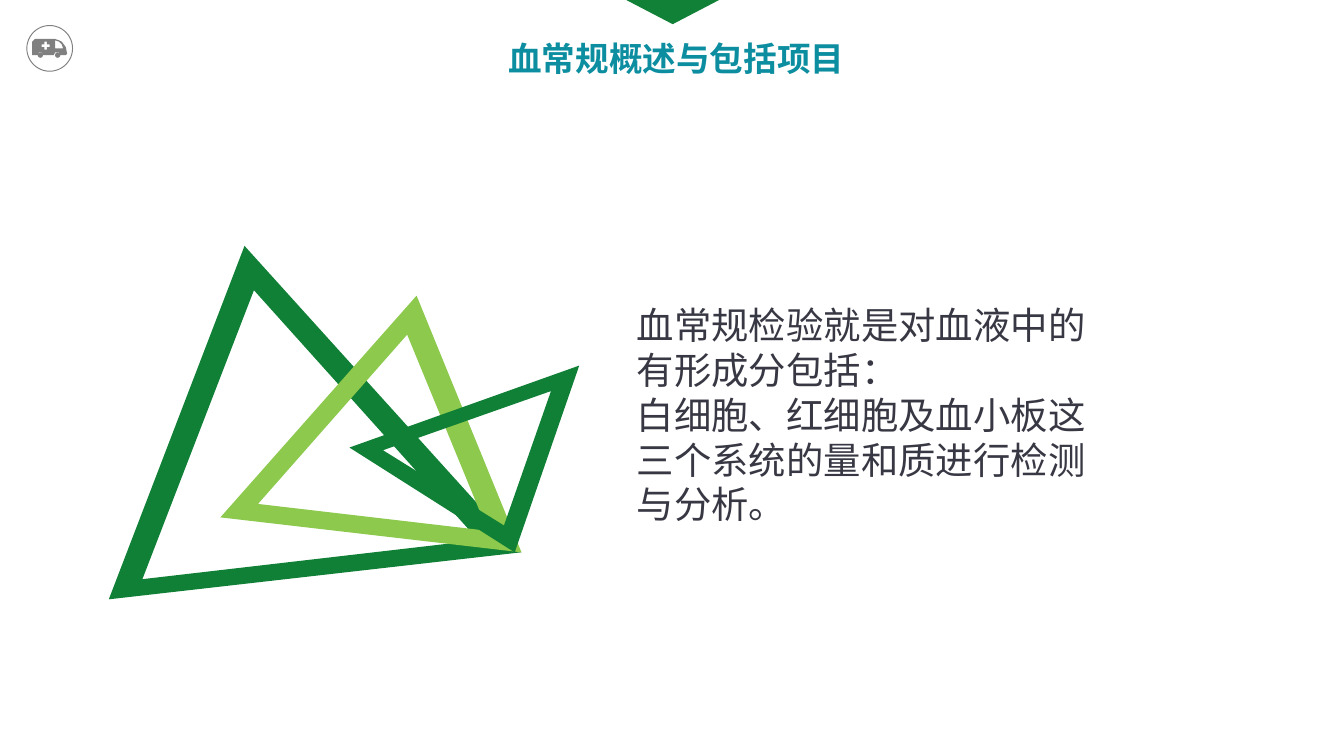
"""Build the slide that introduces the routine blood test."""
from dataclasses import dataclass

from lxml import etree
from pptx import Presentation
from pptx import util as u
from pptx.dml.color import RGBColor
from pptx.enum import shapes, text
from pptx.oxml import ns
from pptx.shapes.autoshape import Shape
from pptx.slide import Slide

Point = tuple[float, float]
Contour = list[Point]

SLIDE_WIDTH = u.Inches(10)
SLIDE_HEIGHT = SLIDE_WIDTH * 9 // 16
FONT = "Noto Sans CJK SC"
GREEN = RGBColor(0x10, 0x80, 0x36)
POINTER_GREEN = RGBColor(0x10, 0x81, 0x36)
LIME = RGBColor(0x8C, 0xC9, 0x4C)
TEAL = RGBColor(0x0D, 0x8E, 0xA0)
DARK = RGBColor(0x37, 0x38, 0x43)
GRAY = RGBColor(0x80, 0x80, 0x80)


@dataclass(frozen=True)
class Box:
    left: float
    top: float
    width: float
    height: float


@dataclass(frozen=True)
class Outline:
    contours: list[Contour]
    color: RGBColor


@dataclass(frozen=True)
class TextBlock:
    box: Box
    lines: list[str]
    size: float
    spacing: float
    color: RGBColor
    bold: bool
    wrap: bool
    alignment: text.PP_ALIGN


def cross(x: float, y: float, arm: float, half: float) -> Contour:
    """Return the twelve corners of a plus sign centred on x, y."""
    quarter = [(half, -arm), (half, -half), (arm, -half)]
    corners: Contour = []
    for _ in range(4):
        corners += [(x + dx, y + dy) for dx, dy in quarter]
        quarter = [(-dy, dx) for dx, dy in quarter]
    return corners


BODY = [(0.24, 0.31), (0.26, 0.29), (0.41, 0.29), (0.44, 0.3), (0.46, 0.31),
        (0.49, 0.35), (0.5, 0.4), (0.49, 0.41), (0.45, 0.41), (0.44, 0.39),
        (0.41, 0.39), (0.4, 0.41), (0.32, 0.41), (0.31, 0.39), (0.29, 0.39),
        (0.28, 0.41), (0.24, 0.41)]
WINDOW = [(0.41, 0.3), (0.41, 0.36), (0.47, 0.36), (0.46, 0.33), (0.44, 0.31)]
AMBULANCE = Outline([BODY, WINDOW, cross(0.34, 0.34, 0.03, 0.01)], GRAY)
WHEELS = [Box(left, 0.39, 0.04, 0.04) for left in (0.28, 0.41)]
RING = Box(0.2, 0.19, 0.34, 0.34)
POINTER = Box(4.64, -0.01, 0.73, 0.19)

TRIANGLES = [
    Outline([[(1.82, 1.83), (0.81, 4.46), (3.88, 4.11)],
             [(1.89, 2.16), (3.56, 4.02), (1.06, 4.31)]], GREEN),
    Outline([[(3.1, 2.2), (1.64, 3.85), (3.88, 4.11)],
             [(3.03, 2.49), (3.63, 3.95), (1.92, 3.75)]], LIME),
    Outline([[(2.6, 3.33), (3.83, 4.11), (4.31, 2.72)],
             [(3.75, 3.91), (2.85, 3.35), (4.1, 2.91)]], GREEN),
]

TEXT_BLOCKS = [
    TextBlock(Box(3.67, 0.23, 2.71, 0.39), ["血常规概述与包括项目"],
              18, 22, TEAL, True, False, text.PP_ALIGN.RIGHT),
    TextBlock(Box(4.64, 2.2, 4.14, 1.78),
              ["血常规检验就是对血液中的", "有形成分包括：",
               "白细胞、红细胞及血小板这", "三个系统的量和质进行检测", "与分析。"],
              20, 24, DARK, False, True, text.PP_ALIGN.LEFT),
]


def place(box: Box) -> tuple[u.Length, ...]:
    """Return the box as lengths."""
    return tuple(u.Inches(value) for value in
                 (box.left, box.top, box.width, box.height))


def paint(shape: Shape, color: RGBColor) -> None:
    """Give the shape a plain fill without line or shadow."""
    shape.shadow.inherit = False
    shape.fill.solid()
    shape.fill.fore_color.rgb = color
    shape.line.fill.background()


def draw_preset(slide: Slide, kind: shapes.MSO_SHAPE, box: Box,
                color: RGBColor) -> Shape:
    """Draw a filled preset shape."""
    shape = slide.shapes.add_shape(kind, *place(box))
    paint(shape, color)
    return shape


def draw_outline(slide: Slide, outline: Outline) -> None:
    """Draw a filled freeform whose later contours are holes."""
    contours = [[(u.Inches(x), u.Inches(y)) for x, y in contour]
                for contour in outline.contours]
    builder = slide.shapes.build_freeform(*contours[0][0])
    builder.add_line_segments(contours[0][1:])
    for hole in contours[1:]:
        builder.move_to(*hole[0])
        builder.add_line_segments(hole[1:])
    paint(builder.convert_to_shape(), outline.color)


def draw_text(slide: Slide, block: TextBlock) -> None:
    """Draw a text box with one paragraph for each line."""
    frame = slide.shapes.add_textbox(*place(block.box)).text_frame
    frame.word_wrap = block.wrap
    frame.auto_size = text.MSO_AUTO_SIZE.SHAPE_TO_FIT_TEXT
    for index, line in enumerate(block.lines):
        paragraph = frame.add_paragraph() if index else frame.paragraphs[0]
        paragraph.alignment = block.alignment
        paragraph.line_spacing = u.Pt(block.spacing)
        run = paragraph.add_run()
        run.text = line
        run.font.size = u.Pt(block.size)
        run.font.bold = block.bold
        run.font.name = FONT
        run.font.color.rgb = block.color
        properties = run.font._element
        etree.SubElement(properties, ns.qn("a:ea"), typeface=FONT)


def main() -> None:
    """Build and save the presentation."""
    presentation = Presentation()
    presentation.slide_width = SLIDE_WIDTH
    presentation.slide_height = SLIDE_HEIGHT
    slide = presentation.slides.add_slide(presentation.slide_layouts[6])

    for wheel in WHEELS:
        draw_preset(slide, shapes.MSO_SHAPE.OVAL, wheel, GRAY)
    draw_outline(slide, AMBULANCE)
    ring = draw_preset(slide, shapes.MSO_SHAPE.OVAL, RING, GRAY)
    ring.fill.background()
    ring.line.color.rgb = GRAY
    ring.line.width = u.Pt(0.5)

    for triangle in TRIANGLES:
        draw_outline(slide, triangle)
    pointer = draw_preset(slide, shapes.MSO_SHAPE.ISOSCELES_TRIANGLE,
                          POINTER, POINTER_GREEN)
    pointer.rotation = 180
    for block in TEXT_BLOCKS:
        draw_text(slide, block)

    presentation.save("out.pptx")


if __name__ == "__main__":
    main()
